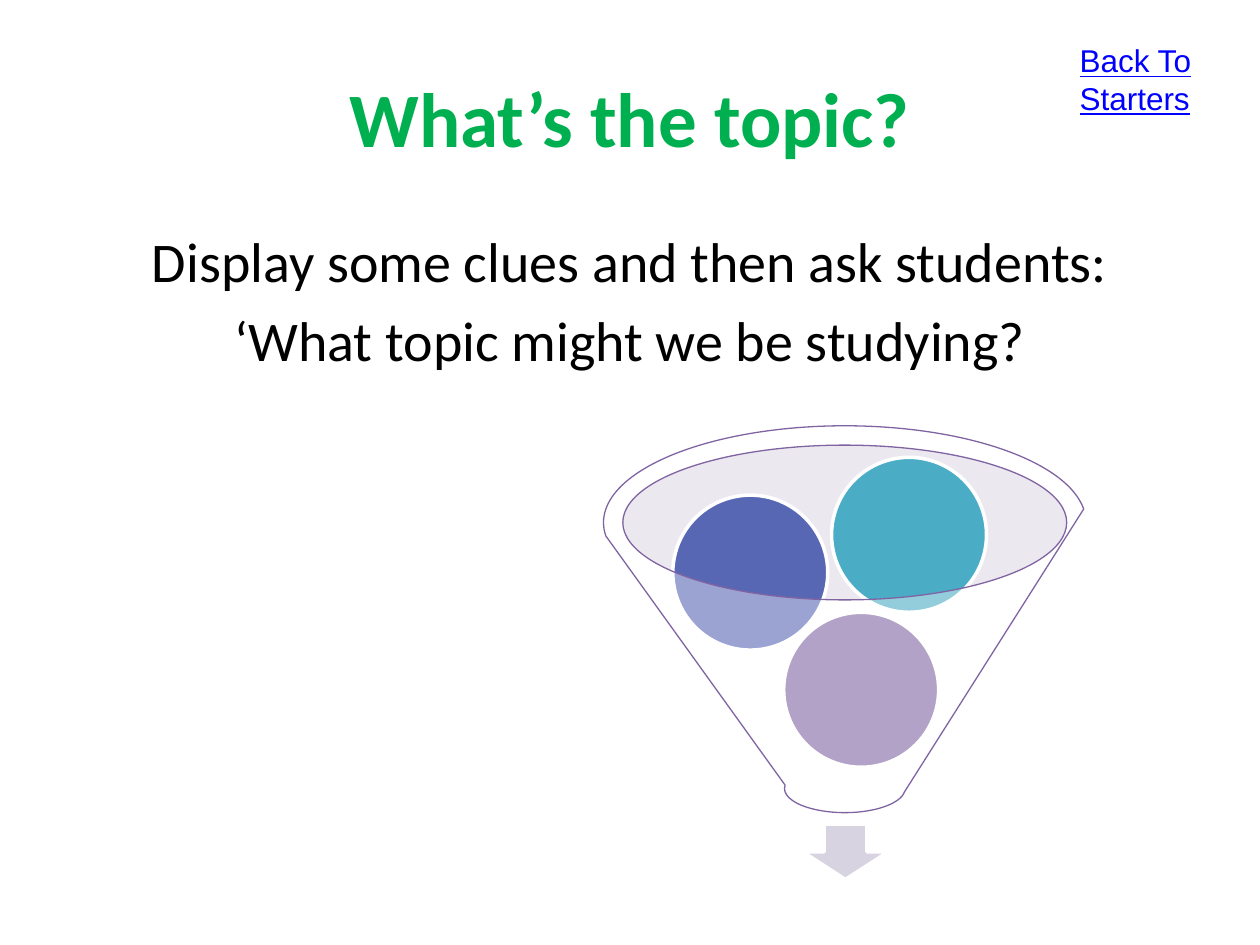
from pptx import Presentation
from pptx.dml.color import RGBColor
from pptx.enum.shapes import MSO_SHAPE
from pptx.enum.text import MSO_ANCHOR, MSO_AUTO_SIZE, PP_ALIGN
from pptx.oxml.ns import qn
from pptx.util import Inches, Pt
from lxml.etree import SubElement

THEME = {
    "title": {"name": "Calibri", "size": Pt(44), "bold": True, "color": "00B050"},
    "body": {"name": "Calibri", "size": Pt(32), "color": "000000"},
    "link": {"name": "Arial", "size": Pt(18), "underline": True, "color": "0000FF"},
    "rim": "CDC6D7", "arrow": "D8D3E0", "edge": "8064A2", "white": "FFFFFF",
    "balls": ["8064A2", "5767B4", "4BACC6"],
}
TITLE = "What’s the topic?"
BODY = ["Display some clues and then ask students:",
        "‘What topic might we be studying?"]
LINK = "Back To Starters"
BALL = 1.23
SPOTS = [(6.22, 4.86), (5.34, 3.93), (6.6, 3.63)]


def style(para, look):
    for key, value in look.items():
        if key == "color":
            para.font.color.rgb = RGBColor.from_string(value)
        else:
            setattr(para.font, key, value)


def place(shape, box):
    for key, value in zip(("left", "top", "width", "height"), box):
        setattr(shape, key, Inches(value))


def draw(group, kind, box, fill, line=None, width=2, alpha=None):
    shape = group.shapes.add_shape(kind, *map(Inches, box))
    shape.shadow.inherit = False
    shape.fill.solid()
    shape.fill.fore_color.rgb = RGBColor.from_string(fill)
    if alpha:
        color = shape.fill._xPr.find(qn("a:solidFill"))[0]
        SubElement(color, qn("a:alpha")).set("val", str(alpha * 1000))
    if line:
        shape.line.color.rgb = RGBColor.from_string(line)
        shape.line.width = Pt(width)
    else:
        shape.line.fill.background()


def main():
    deck = Presentation()
    deck.slide_width, deck.slide_height = Inches(10), Inches(7.5)
    slide = deck.slides.add_slide(deck.slide_layouts[1])

    title, body = slide.placeholders
    place(title, (0.5, 0.3, 9, 1.25))
    place(body, (0.5, 1.75, 9, 4.95))
    link = slide.shapes.add_textbox(*map(Inches, (8.47, 0.28, 1.26, 0.7)))

    title.text_frame.text = TITLE
    title.text_frame.vertical_anchor = MSO_ANCHOR.MIDDLE
    body.text_frame.text = "\n".join(BODY)
    link.text_frame.text = LINK
    for shape, look in ((title, "title"), (body, "body"), (link, "link")):
        frame = shape.text_frame
        frame.word_wrap = True
        frame.auto_size = MSO_AUTO_SIZE.NONE
        for para in frame.paragraphs:
            if shape is not link:
                para.alignment = PP_ALIGN.CENTER
            if shape is body:
                SubElement(para._p.get_or_add_pPr(), qn("a:buNone"))
            style(para, THEME[look])
        frame.paragraphs[0].space_before = Pt(0)
    link.text_frame.auto_size = MSO_AUTO_SIZE.SHAPE_TO_FIT_TEXT

    group = slide.shapes.add_group_shape()
    white = THEME["white"]
    draw(group, MSO_SHAPE.OVAL, (4.94, 3.53, 3.53, 1.23), THEME["rim"], alpha=40)
    draw(group, MSO_SHAPE.DOWN_ARROW, (6.37, 6.54, 0.68, 0.44), THEME["arrow"], white)
    for spot, fill in zip(SPOTS, THEME["balls"]):
        draw(group, MSO_SHAPE.OVAL, (*spot, BALL, BALL), fill, white)
    draw(group, MSO_SHAPE.FUNNEL, (4.79, 3.38, 3.83, 3.07), white,
         THEME["edge"], 0.75, 40)

    deck.save("out.pptx")


if __name__ == "__main__":
    main()
